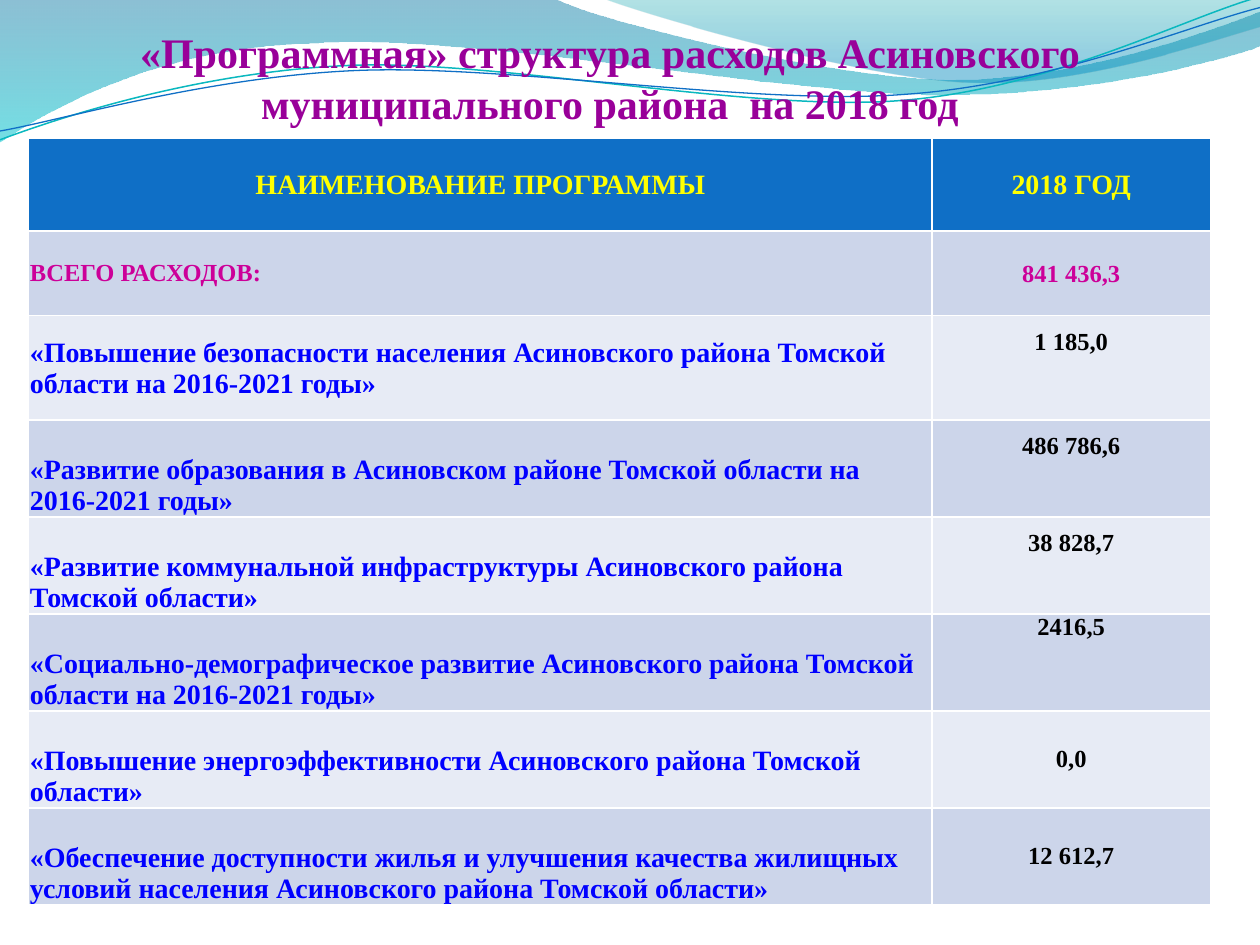
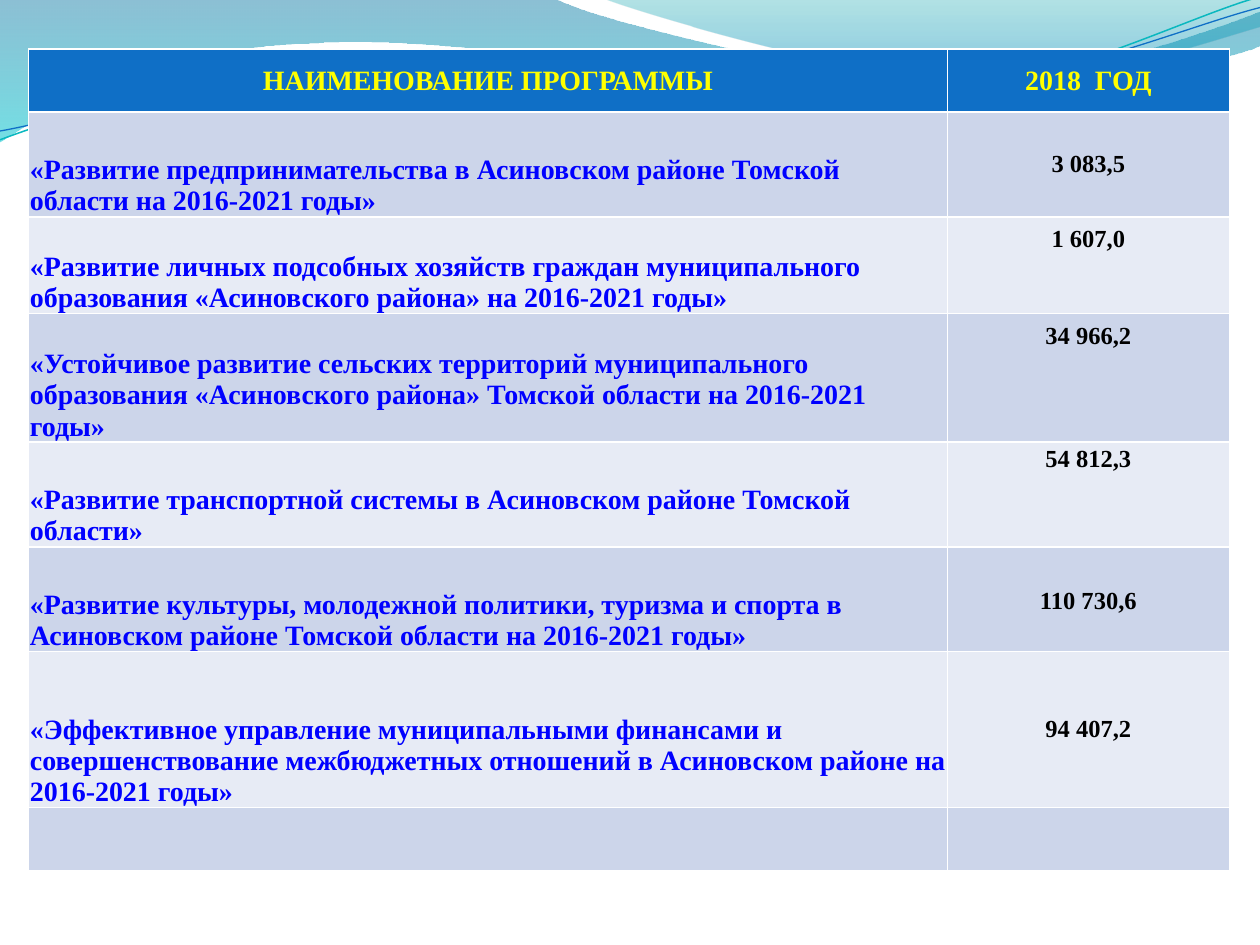
from pptx import Presentation
from pptx import util as u
from pptx.dml.color import RGBColor
from pptx.enum import text
from pptx.oxml import ns
from lxml import etree

FONT = "Times New Roman"
PURPLE = RGBColor(0x99, 0x00, 0x99)
MAGENTA = RGBColor(0xCC, 0x00, 0x99)
YELLOW = RGBColor(0xFF, 0xFF, 0x00)
BLUE = RGBColor(0x00, 0x00, 0xFF)
BLACK = RGBColor(0x00, 0x00, 0x00)
HEADER_FILL = RGBColor(0x0F, 0x6F, 0xC6)
BAND_FILLS = (RGBColor(0xE7, 0xEB, 0xF5), RGBColor(0xCC, 0xD5, 0xEA))
TEAL_LINE = RGBColor(0x0A, 0xB8, 0xBF)

TOP, MIDDLE, BOTTOM = (text.MSO_ANCHOR.TOP, text.MSO_ANCHOR.MIDDLE,
                       text.MSO_ANCHOR.BOTTOM)
CENTER, LEFT = text.PP_ALIGN.CENTER, text.PP_ALIGN.LEFT

# Cell margins: left and right, top, bottom
TIGHT = (0.72, 0.72, 0)
RAISED = (0.72, 0.72, 16.2)
PADDED = (2.9, 5, 5)
FLUSH = (5, 0, 0)
TABLE_LEFT = 16.4

# Wave outlines in hundredths of an inch; L takes one point, C takes three
WAVE_UNIT = u.Pt(0.72)
BIG_WAVE = ("LCCLCCC", [
    (0, 0), (440, -1), (476, 17), (664, 63), (758, 63), (853, 63), (958, 26),
    (1000, 9), (1001, 36), (983, 44), (870, 76), (746, 75), (622, 75),
    (382, 28), (257, 34), (129, 36), (46, 83), (-1, 113)])
RIGHT_WAVE = ("CCL", [
    (479, -1), (509, 11), (682, 62), (769, 65), (856, 69), (961, 32),
    (1000, 21), (1000, 0)])
TEAL_CURVE = ("CCC", [
    (0, 111), (48, 93), (158, 57), (277, 52), (395, 47), (593, 89),
    (713, 80), (833, 71), (938, 15), (998, -2)])
BLUE_CURVE = ("CCC", [
    (0, 104), (47, 96), (164, 61), (283, 56), (403, 51), (597, 84),
    (717, 75), (836, 67), (941, 21), (1000, 6)])

# Rows: height, programme, sum, and anchor, margins and line spacing of the sum
PROGRAMMES_1 = [
    (59.8, "«Повышение безопасности населения Асиновского района Томской "
     "области на 2016-2021 годы»", "1 185,0", TOP, PADDED, 1.15),
    (55.4, "«Развитие образования в Асиновском районе Томской области на "
     "2016-2021 годы»", "486 786,6", TOP, PADDED, 1.15),
    (55.4, "«Развитие коммунальной инфраструктуры Асиновского района Томской "
     "области»", "38 828,7", TOP, PADDED, 1.15),
    (55.4, "«Социально-демографическое развитие Асиновского района Томской "
     "области на 2016-2021 годы»", "2416,5", TOP, FLUSH, 1),
    (55.4, "«Повышение энергоэффективности Асиновского района Томской "
     "области»", "0,0", MIDDLE, PADDED, 1),
    (55.4, "«Обеспечение доступности жилья и улучшения качества жилищных "
     "условий населения Асиновского района Томской области»", "12 612,7",
     MIDDLE, PADDED, 1),
]
PROGRAMMES_2 = [
    (59.8, "«Развитие предпринимательства в Асиновском районе Томской области "
     "на 2016-2021 годы»", "3 083,5", MIDDLE, FLUSH, 1),
    (55.4, "«Развитие личных подсобных хозяйств граждан муниципального "
     "образования «Асиновского района» на 2016-2021 годы»", "1 607,0",
     TOP, PADDED, 1),
    (73.4, "«Устойчивое развитие сельских территорий муниципального "
     "образования «Асиновского района» Томской области на 2016-2021 годы»",
     "34 966,2", TOP, PADDED, 1),
    (59.8, "«Развитие транспортной системы в Асиновском районе Томской "
     "области»", "54 812,3", TOP, FLUSH, 1.15),
    (59.8, "«Развитие культуры, молодежной политики, туризма и спорта в "
     "Асиновском районе Томской области на 2016-2021 годы»", "110 730,6",
     MIDDLE, PADDED, 1.15),
    (89.3, "«Эффективное управление муниципальными финансами и "
     "совершенствование межбюджетных отношений в Асиновском районе на "
     "2016-2021 годы»", "94 407,2", MIDDLE, FLUSH, 1),
]


def add_text(frame, words, size, color, align):
    para = frame.paragraphs[0]
    para.alignment = align
    span = para.add_run()
    span.text = words
    span.font.name, span.font.size = FONT, u.Pt(size)
    span.font.bold, span.font.color.rgb = True, color
    return para


def add_outline(page, outline, closed):
    """Draw a freeform and turn its C segments into Bezier curves."""
    segments, points = outline
    builder = page.shapes.build_freeform(*points[0], scale=WAVE_UNIT)
    builder.add_line_segments(points[1:], close=closed)
    shape = builder.convert_to_shape()
    shape.shadow.inherit = False
    corners = iter(list(shape.element.iter(ns.qn("a:lnTo"))))
    for segment in segments:
        first = next(corners)
        if segment == "C":
            curve = etree.Element(ns.qn("a:cubicBezTo"))
            first.addprevious(curve)
            for corner in (first, next(corners), next(corners)):
                curve.append(corner[0])
                corner.getparent().remove(corner)
    return shape


def add_wave(page, outline, stops):
    wave = add_outline(page, outline, True)
    wave.line.fill.background()
    wave.fill.gradient()
    wave.fill.gradient_angle = 270
    for stop, (position, color, opacity) in zip(wave.fill.gradient_stops, stops):
        stop.position = position
        stop.color.rgb = RGBColor.from_string(color)
    for node, (_, _, opacity) in zip(wave.element.iter(ns.qn("a:srgbClr")), stops):
        etree.SubElement(node, ns.qn("a:alpha")).set("val", str(opacity * 1000))
    return wave


def add_curve(page, outline, color, width):
    curve = add_outline(page, outline, False)
    curve.fill.background()
    curve.line.color.rgb = color
    curve.line.width = u.Pt(width)
    return curve


def decorate_master(deck, page):
    """Build the waves on a page, then move them behind the master."""
    waves = [
        add_wave(page, BIG_WAVE, [(0, "0074A1", 45), (1, "00C6CF", 55)]),
        add_wave(page, RIGHT_WAVE, [(0, "00A1A9", 30), (0.8, "008BBF", 45)]),
        add_curve(page, TEAL_CURVE, TEAL_LINE, 0.85),
        add_curve(page, BLUE_CURVE, HEADER_FILL, 0.75),
    ]
    tree = deck.slide_master.shapes.element
    for index, wave in enumerate(waves):
        wave.name = f"Wave {index + 1}"
        wave.element.nvSpPr.cNvPr.set("id", str(100 + index))
        tree.insert(2 + index, wave.element)


def format_title(page, words):
    title = page.shapes.title
    title.left, title.top = u.Pt(16.6), u.Pt(16.6)
    title.width, title.height = u.Pt(663.8), u.Pt(56.2)
    frame = title.text_frame
    frame.word_wrap, frame.auto_size = True, text.MSO_AUTO_SIZE.NONE
    frame.vertical_anchor = BOTTOM
    frame.margin_left = frame.margin_right = frame.margin_bottom = 0
    frame.margin_top = u.Pt(3.6)
    add_text(frame, words, 24, PURPLE, CENTER)


def fill_cell(cell, words, size, color, align, anchor, margins=TIGHT, spacing=1):
    side, above, below = margins
    cell.margin_left = cell.margin_right = u.Pt(side)
    cell.margin_top, cell.margin_bottom = u.Pt(above), u.Pt(below)
    cell.vertical_anchor = anchor
    para = add_text(cell.text_frame, words, size, color, align)
    if spacing != 1:
        para.line_spacing = spacing


def add_budget_table(page, top, widths, heights):
    """Add an empty table with a blue header and alternating bands."""
    table = page.shapes.add_table(
        len(heights), len(widths), u.Pt(TABLE_LEFT), u.Pt(top),
        u.Pt(sum(widths)), u.Pt(sum(heights))).table
    for column, width in zip(table.columns, widths):
        column.width = u.Pt(width)
    for index, (row, height) in enumerate(zip(table.rows, heights)):
        row.height = u.Pt(height)
        for cell in row.cells:
            cell.fill.solid()
            cell.fill.fore_color.rgb = BAND_FILLS[index % 2] if index else HEADER_FILL
    return table


def fill_header(table, year):
    for column, words in enumerate(("НАИМЕНОВАНИЕ ПРОГРАММЫ", year)):
        fill_cell(table.cell(0, column), words, 16, YELLOW, CENTER, MIDDLE)


def fill_programmes(table, first_row, programmes, name_anchors):
    for index, (_, name, amount, anchor, margins, spacing) in enumerate(programmes):
        row = first_row + index
        fill_cell(table.cell(row, 0), name, 16, BLUE, LEFT,
                  name_anchors.get(row, BOTTOM))
        fill_cell(table.cell(row, 1), amount, 14, BLACK, CENTER,
                  anchor, margins, spacing)


def main():
    deck = Presentation()
    deck.slide_width, deck.slide_height = u.Pt(720), u.Pt(540)

    # Slide 1: title, total and first programmes
    page = deck.slides.add_slide(deck.slide_layouts[5])
    decorate_master(deck, page)
    format_title(page, "«Программная» структура расходов Асиновского "
                       "муниципального района  на 2018 год")
    heights = [53.3, 48.2] + [row[0] for row in PROGRAMMES_1]
    table = add_budget_table(page, 78.8, (516.2, 159.1), heights)
    fill_header(table, "2018 ГОД")
    fill_cell(table.cell(1, 0), "ВСЕГО РАСХОДОВ:", 14, MAGENTA, LEFT, BOTTOM, RAISED)
    fill_cell(table.cell(1, 1), "841 436,3", 14, MAGENTA, CENTER, MIDDLE)
    fill_programmes(table, 2, PROGRAMMES_1, {2: MIDDLE})

    # Slide 2: remaining programmes and an empty last row
    page = deck.slides.add_slide(deck.slide_layouts[6])
    heights = [36] + [row[0] for row in PROGRAMMES_2] + [36]
    table = add_budget_table(page, 28.1, (524.9, 161.3), heights)
    fill_header(table, "2018  ГОД")
    fill_programmes(table, 1, PROGRAMMES_2, {})

    deck.save("out.pptx")


if __name__ == "__main__":
    main()
